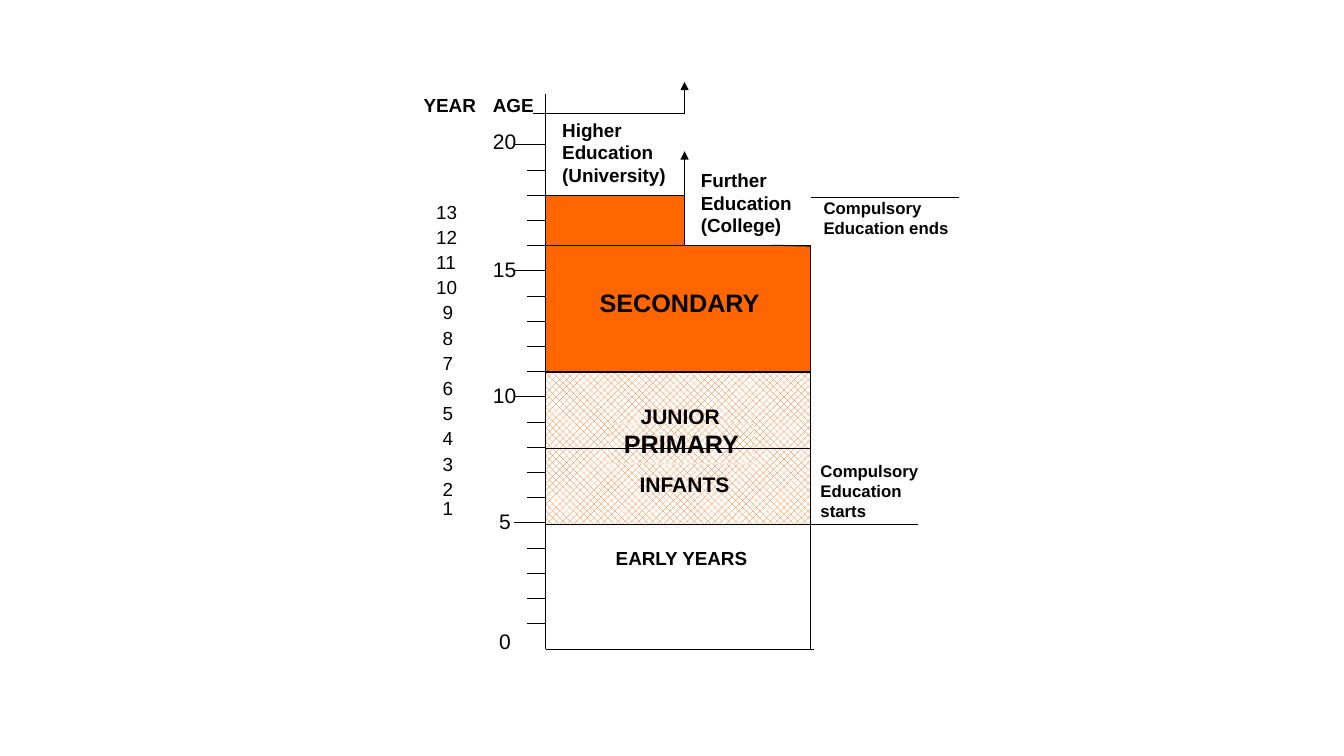
from dataclasses import dataclass
from typing import Optional

from lxml import etree
from pptx import Presentation
from pptx import util as u
from pptx.dml.color import RGBColor
from pptx.enum import dml, shapes, text
from pptx.oxml import ns


@dataclass(frozen=True)
class Theme:
    ink: RGBColor = RGBColor(0, 0, 0)
    paper: RGBColor = RGBColor(255, 255, 255)
    orange: RGBColor = RGBColor(255, 102, 0)
    font: str = "Arial"
    note: float = 12
    label: float = 13.5
    scale: float = 15
    stage: float = 18
    line: float = 0.75
    thin: float = 0.5


@dataclass(frozen=True)
class Line:
    x1: float
    y1: float
    x2: float
    y2: float
    arrow: bool = False
    width: float = 0.75


@dataclass(frozen=True)
class Box:
    x: float
    y: float
    w: float
    h: float
    fill: Optional[str] = None
    edge: bool = True


@dataclass(frozen=True)
class Label:
    words: str
    x: float
    y: float
    w: float
    h: float
    size: float
    bold: bool = True
    mid: bool = False


T = Theme()
AXIS, RIGHT, SPLIT = 390, 579, 489
BASE, STEP = 463.5, 18
BAR = RIGHT - AXIS

deck = Presentation()
deck.slide_width, deck.slide_height = u.Pt(960), u.Pt(540)
slide = deck.slides.add_slide(deck.slide_layouts[6])


def level(age: float) -> float:
    """Height on the slide of an age on the scale."""
    return BASE - STEP * age


def draw_line(line: Line) -> None:
    ends = (u.Pt(v) for v in (line.x1, line.y1, line.x2, line.y2))
    link = slide.shapes.add_connector(shapes.MSO_CONNECTOR.STRAIGHT, *ends)
    link.line.color.rgb = T.ink
    link.line.width = u.Pt(line.width)
    if line.arrow:
        tail = etree.SubElement(link.line._get_or_add_ln(), ns.qn("a:tailEnd"))
        tail.set("type", "triangle")
    etree.SubElement(link._element.spPr, ns.qn("a:effectLst"))


def draw_box(box: Box):
    spot = (u.Pt(v) for v in (box.x, box.y, box.w, box.h))
    rect = slide.shapes.add_shape(shapes.MSO_SHAPE.RECTANGLE, *spot)
    rect.shadow.inherit = False
    if box.fill == "solid":
        rect.fill.solid()
        rect.fill.fore_color.rgb = T.orange
    elif box.fill == "dots":
        rect.fill.patterned()
        rect.fill.pattern = dml.MSO_PATTERN.PERCENT_50
        rect.fill.fore_color.rgb = T.orange
        rect.fill.back_color.rgb = T.paper
    else:
        rect.fill.background()
    if box.edge:
        rect.line.color.rgb = T.ink
        rect.line.width = u.Pt(T.line)
    else:
        rect.line.fill.background()
    return rect


def put_text(para, words: str, *, size: float, bold: bool = True,
             mid: bool = False, gap: float = 0) -> None:
    para.text = words
    para.alignment = text.PP_ALIGN.CENTER if mid else text.PP_ALIGN.LEFT
    if gap:
        para.space_before = u.Pt(gap)
    font = para.runs[0].font
    font.name, font.size, font.bold = T.font, u.Pt(size), bold
    font.color.rgb = T.ink


def draw_label(tag: Label):
    spot = (u.Pt(v) for v in (tag.x, tag.y, tag.w, tag.h))
    frame = slide.shapes.add_textbox(*spot).text_frame
    frame.word_wrap = True
    frame.auto_size = text.MSO_AUTO_SIZE.SHAPE_TO_FIT_TEXT
    put_text(frame.paragraphs[0], tag.words, size=tag.size,
             bold=tag.bold, mid=tag.mid)
    return frame


def draw_scale() -> None:
    draw_line(Line(AXIS, 67.5, AXIS, BASE))
    for age in range(1, 21):
        tick = 22.5 if age % 5 == 0 else 13.5
        draw_line(Line(AXIS, level(age), AXIS - tick, level(age)))

    head = draw_label(Label("AGE", 345, 63, 67.5, 78.5, T.label))
    put_text(head.add_paragraph(), "20", size=T.scale, bold=False, gap=9)
    for age, top in ((15, 180), (10, 270), (5, 360), (0, 445.5)):
        x, wide = (345, 31.5) if age > 9 else (349.5, 27)
        draw_label(Label(str(age), x, top, wide, 25.2, T.scale, bold=False))

    draw_label(Label("YEAR", 295.5, 63, 54, 23.8, T.label))
    for year in range(1, 14):
        x, wide = (304.5, 31.5) if year > 9 else (309, 18)
        top = level(year + 5) if year > 1 else 351
        draw_label(Label(str(year), x, top, wide, 23.8, T.label, bold=False))


def draw_stages() -> None:
    early = 374.4
    draw_line(Line(381, 81, SPLIT, 81))
    draw_line(Line(SPLIT, 81, SPLIT, 58.5, arrow=True))
    draw_label(Label("Higher Education (University)", 394.5, 81, 103.5, 56.2, T.label))

    draw_box(Box(AXIS, level(18), SPLIT - AXIS, 36, "solid"))
    draw_line(Line(SPLIT, level(16), SPLIT, 108, arrow=True))
    draw_label(Label("Further Education (College)", 493.5, 117, 103.5, 56.2, T.label))
    draw_label(Label("EARLY YEARS", 430.5, 387, 112.5, 23.8, T.label, mid=True))

    draw_box(Box(AXIS, 266.4, BAR, 108, "dots"))
    core = draw_box(Box(435, 302.4, 103.5, 28.8, "dots", edge=False)).text_frame
    core.word_wrap = True
    core.vertical_anchor = text.MSO_ANCHOR.TOP
    put_text(core.paragraphs[0], "PRIMARY", size=T.stage, mid=True)
    draw_line(Line(556.5, early, 655.5, early))
    draw_label(Label("Compulsory Education starts", 579, 325.5, 100.8, 51, T.note))

    draw_box(Box(AXIS, 175.2, BAR, 90, "solid"))
    draw_line(Line(552, 175.2, RIGHT, 175.8))
    draw_label(Label("Compulsory Education ends", 581.2, 137.5, 105.8, 36.7, T.note))
    draw_label(Label("SECONDARY", 421.2, 201.6, 130.5, 28.8, T.stage))

    for name, top, x, y in (("INFANTS", 320.4, 432, 333.4),
                            ("JUNIOR", 266.4, 429, 284.4)):
        draw_box(Box(AXIS, top, BAR, 54))
        draw_label(Label(name, x, y, 113.8, 25.2, T.scale, mid=True))

    draw_line(Line(RIGHT, 141, 685, 141))
    draw_line(Line(RIGHT, early, RIGHT, 410, width=T.thin))
    draw_line(Line(RIGHT, 410, RIGHT, BASE, width=T.thin))
    draw_line(Line(AXIS, BASE, 581.2, BASE, width=T.thin))


def main() -> None:
    draw_scale()
    draw_stages()
    deck.save("out.pptx")


if __name__ == "__main__":
    main()
